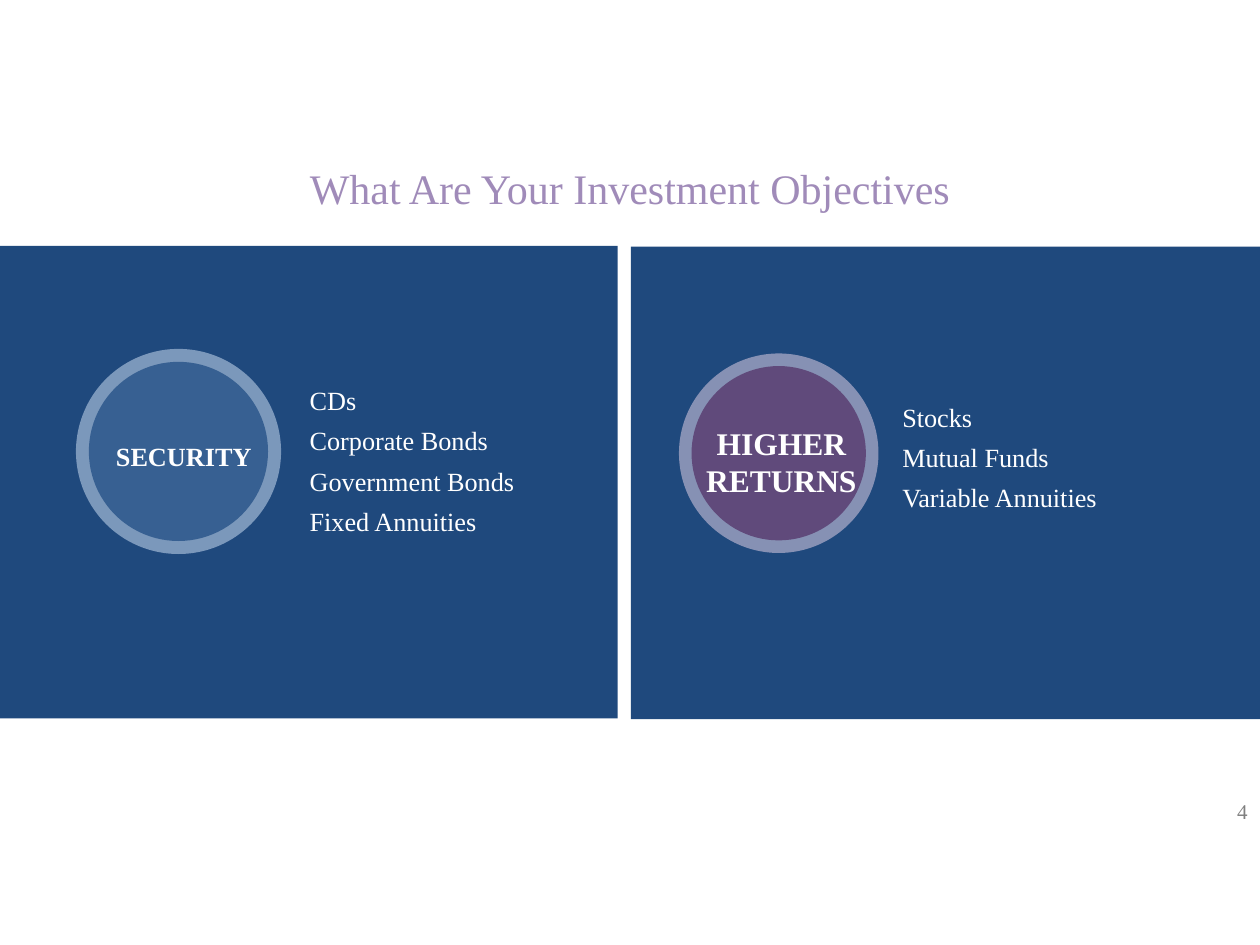
"""Build the investment objectives slide."""
from lxml import etree
from pptx import Presentation
from pptx.dml.color import RGBColor
from pptx.enum import shapes, text
from pptx.oxml import ns
from pptx.util import Pt

FONT = "Times New Roman"
HUES = {
    "panel": "1F497D", "title": "A08BB9", "white": "FFFFFF", "page": "808080",
    "blue": "376092", "sky": "B9CDE5", "plum": "604A7B", "lilac": "CCC1DA",
}


def place(item, box):
    """Set left, top, width and height in points."""
    item.left, item.top, item.width, item.height = map(Pt, box)


def write(frame, lines, size, hue, align=text.PP_ALIGN.LEFT, bold=False):
    """Fill a frame with evenly spaced, unbulleted lines."""
    frame.word_wrap = True
    frame.auto_size = text.MSO_AUTO_SIZE.NONE
    frame.text = "\n".join(lines)
    for rank, para in enumerate(frame.paragraphs):
        props = para._p.get_or_add_pPr()
        props.set("marL", "0")
        props.set("indent", "0")
        etree.SubElement(props, ns.qn("a:buNone"))
        para.alignment = align
        para.space_before = Pt(5 if rank else 0)
        font = para.font
        font.name, font.size, font.bold = FONT, Pt(size), bold
        font.color.rgb = RGBColor.from_string(HUES[hue])


def add_form(pool, kind, box, hue, alpha=None):
    """Add a flat borderless shape, see-through if alpha is given."""
    form = pool.add_shape(kind, *map(Pt, box))
    form.shadow.inherit = False
    form.line.fill.background()
    form.fill.solid()
    form.fill.fore_color.rgb = RGBColor.from_string(HUES[hue])
    if alpha:
        tone = form._element.spPr.find(".//" + ns.qn("a:srgbClr"))
        etree.SubElement(tone, ns.qn("a:alpha"), val=str(alpha * 1000))


def add_badge(slide, mid, size, rim, ring, core):
    """Add a disc inside a translucent ring, grouped."""
    group = slide.shapes.add_group_shape()
    for span, hue, alpha in ((size, ring, 60), (size - 2 * rim, core, None)):
        box = (mid[0] - span / 2, mid[1] - span / 2, span, span)
        add_form(group.shapes, shapes.MSO_SHAPE.OVAL, box, hue, alpha)


def add_label(slide, box, words, size, hue, align, bold=False):
    """Add a one-paragraph text box."""
    label = slide.shapes.add_textbox(*map(Pt, box))
    write(label.text_frame, [words], size, hue, align, bold)


def set_list(item, box, lines):
    """Fill a body placeholder and bring it to the front."""
    place(item, box)
    write(item.text_frame, lines, 15, "white")
    tree = item._element.getparent()
    tree.append(item._element)


def main():
    """Build and save the slide."""
    deck = Presentation()
    deck.slide_width, deck.slide_height = Pt(720), Pt(540)
    slide = deck.slides.add_slide(deck.slide_layouts[3])
    title, left, right = slide.placeholders
    mid = text.PP_ALIGN.CENTER

    place(title, (0, 89.5, 720, 36))
    write(title.text_frame, ["What Are Your Investment Objectives"], 24, "title", mid)

    for box in ((360.5, 141, 359.5, 270), (0, 140.5, 353, 270)):
        add_form(slide.shapes, shapes.MSO_SHAPE.RECTANGLE, box, "panel")

    add_badge(slide, (102, 258), 117.2, 7.4, "sky", "blue")
    add_badge(slide, (445, 259), 114, 7.2, "lilac", "plum")
    set_list(left, (169.7, 216, 137, 95),
             ["CDs", "Corporate Bonds", "Government Bonds", "Fixed Annuities"])
    set_list(right, (508.4, 225.5, 134, 72),
             ["Stocks", "Mutual Funds", "Variable Annuities"])

    add_label(slide, (57, 248, 96, 25), "SECURITY", 15, "white", mid, True)
    add_label(slide, (395, 238.5, 103, 51), "HIGHER RETURNS", 18, "white", mid, True)
    add_label(slide, (558, 452.5, 162, 21.5), "4", 12, "page", text.PP_ALIGN.RIGHT)
    deck.save("out.pptx")


if __name__ == "__main__":
    main()
